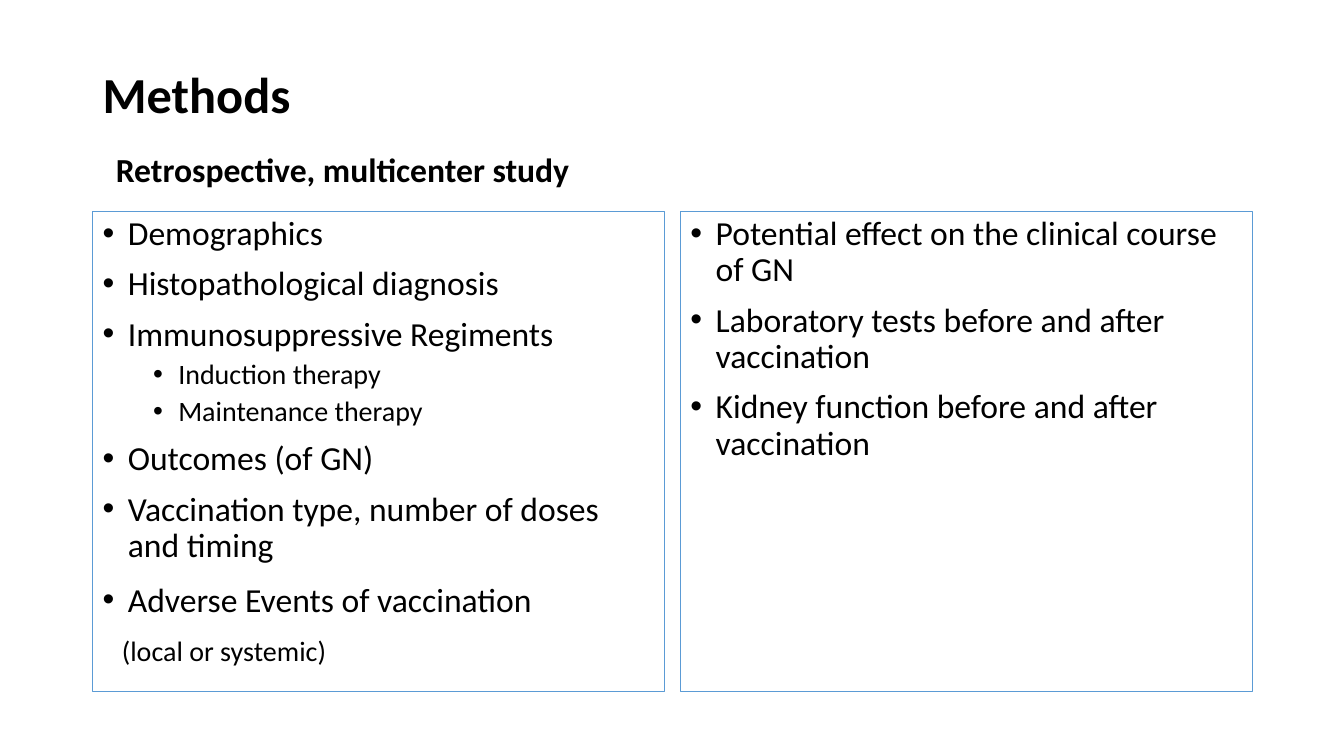
from lxml import etree
from pptx import Presentation
from pptx import util as u
from pptx.dml import color
from pptx.enum import shapes, text
from pptx.oxml import ns


def rgb(value):
    return color.RGBColor.from_string(value)


def add_text(paragraph, wording, size, bold=False):
    run = paragraph.add_run()
    run.text = wording
    formats = {"name": "Calibri", "size": u.Pt(size), "bold": bold}
    for name, value in formats.items():
        setattr(run.font, name, value)
    run.font.color.rgb = rgb("000000")


styles = {
    "item": {"size": 24, "left": 0.25, "indent": -0.25, "before": 10, "spacing": 0.9},
    "subitem": {"size": 20, "left": 0.75, "indent": -0.25, "before": 5, "spacing": 0.9},
    "loose item": {"size": 24, "left": 0.25, "indent": -0.25, "before": 10, "spacing": 1.0},
    "remark": {"size": 20, "left": 0.19, "indent": 0, "before": 10, "spacing": 1.0},
}
columns = [
    (0.92, [
        ("item", "Demographics"),
        ("item", "Histopathological diagnosis"),
        ("item", "Immunosuppressive Regiments"),
        ("subitem", "Induction therapy"),
        ("subitem", "Maintenance therapy"),
        ("item", "Outcomes (of GN)"),
        ("item", "Vaccination type, number of doses and timing"),
        ("loose item", "Adverse Events of vaccination"),
        ("remark", "(local or systemic)"),
    ]),
    (6.75, [
        ("item", "Potential effect on the clinical course of GN"),
        ("item", "Laboratory tests before and after vaccination"),
        ("item", "Kidney function before and after vaccination"),
    ]),
]

presentation = Presentation()
presentation.slide_width = u.Inches(13.33)
presentation.slide_height = u.Inches(7.5)
slide = presentation.slides.add_slide(presentation.slide_layouts[6])

title = slide.shapes.add_textbox(u.Inches(0.92), u.Inches(0.24), u.Inches(11.5), u.Inches(1.45))
title.text_frame.word_wrap = True
title.text_frame.vertical_anchor = text.MSO_ANCHOR.MIDDLE
title.text_frame.paragraphs[0].line_spacing = 0.9
add_text(title.text_frame.paragraphs[0], "Methods", 36, True)

for left, entries in columns:
    panel = slide.shapes.add_shape(
        shapes.MSO_SHAPE.RECTANGLE, u.Inches(left), u.Inches(2.1), u.Inches(5.67), u.Inches(4.76))
    panel.shadow.inherit = False
    panel.fill.background()
    panel.line.color.rgb = rgb("5B9BD5")
    panel.line.width = u.Pt(0.75)
    frame = panel.text_frame
    frame.word_wrap = True
    frame.vertical_anchor = text.MSO_ANCHOR.TOP
    for index, (kind, wording) in enumerate(entries):
        style = styles[kind]
        paragraph = frame.add_paragraph() if index else frame.paragraphs[0]
        properties = paragraph._p.get_or_add_pPr()
        properties.set("marL", str(u.Inches(style["left"])))
        properties.set("indent", str(u.Inches(style["indent"])))
        if kind != "remark":
            font = etree.SubElement(properties, ns.qn("a:buFont"))
            font.set("typeface", "Arial")
            bullet = etree.SubElement(properties, ns.qn("a:buChar"))
            bullet.set("char", "•")
        formats = {
            "alignment": text.PP_ALIGN.LEFT,
            "level": int(kind == "subitem"),
            "line_spacing": style["spacing"],
            "space_before": u.Pt(style["before"] if index else 0),
        }
        for name, value in formats.items():
            setattr(paragraph, name, value)
        add_text(paragraph, wording, style["size"])

subtitle = slide.shapes.add_textbox(u.Inches(1.05), u.Inches(1.43), u.Inches(5.62), u.Inches(0.5))
subtitle.fill.solid()
subtitle.fill.fore_color.rgb = rgb("FFFFFF")
subtitle.text_frame.word_wrap = True
subtitle.text_frame.auto_size = text.MSO_AUTO_SIZE.SHAPE_TO_FIT_TEXT
add_text(subtitle.text_frame.paragraphs[0], "Retrospective, multicenter study", 24, True)

presentation.save("out.pptx")
